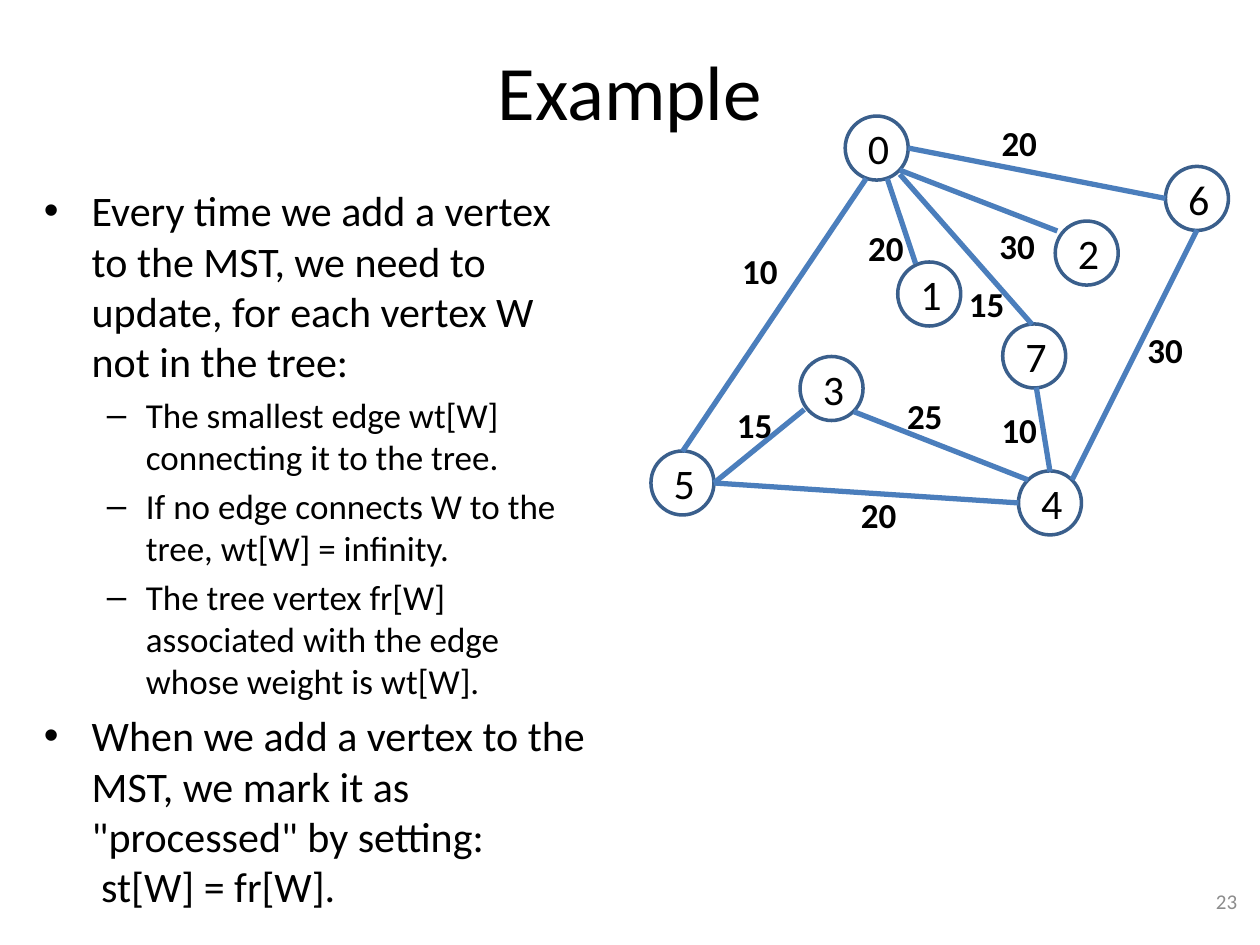
from dataclasses import dataclass

from lxml.etree import SubElement
from pptx import Presentation
from pptx.dml.color import RGBColor
from pptx.enum.shapes import MSO_CONNECTOR as Connector, MSO_SHAPE as Shape
from pptx.enum.text import MSO_ANCHOR as Anchor, PP_ALIGN as Align
from pptx.oxml.ns import qn
from pptx.util import Inches, Pt

COLUMNS, ROWS = 120, 90  # grid cells of 1/12 inch


@dataclass(frozen=True)
class Theme:
    font: str = "Calibri"
    ink: str = "000000"
    muted: str = "8C8C8C"
    outline: str = "3A5F8C"
    edge: str = "4B7EBC"
    title: int = 44
    body: int = 24
    detail: int = 20
    footer: int = 12
    outline_width: int = 2
    edge_width: int = 3


class GraphSlide:
    """Draws elements on one slide; all lengths are grid columns and rows."""

    def __init__(self, presentation, theme):
        self.theme = theme
        self.cell_width = presentation.slide_width / COLUMNS
        self.cell_height = presentation.slide_height / ROWS
        self.slide = presentation.slides.add_slide(presentation.slide_layouts[5])

    def place(self, column, row):
        return round(column * self.cell_width), round(row * self.cell_height)

    def box(self, column, row, width, height):
        return *self.place(column, row), *self.place(width, height)

    def fill_paragraph(self, paragraph, text, size, color=None, bold=False,
                       align=Align.LEFT):
        paragraph.text = text
        paragraph.alignment = align
        formats = {"name": self.theme.font, "size": Pt(size), "bold": bold}
        for run in paragraph.runs:
            for name, value in formats.items():
                setattr(run.font, name, value)
            run.font.color.rgb = RGBColor.from_string(color or self.theme.ink)

    def title(self, text, box):
        shape = self.slide.shapes.title
        for name, value in zip(("left", "top", "width", "height"), self.box(*box)):
            setattr(shape, name, value)
        shape.text_frame.vertical_anchor = Anchor.MIDDLE
        self.fill_paragraph(shape.text_frame.paragraphs[0], text,
                            self.theme.title, align=Align.CENTER)

    def text(self, text, box, size, wrap=True, anchor=Anchor.TOP, **style):
        frame = self.slide.shapes.add_textbox(*self.box(*box)).text_frame
        frame.word_wrap = wrap
        frame.vertical_anchor = anchor
        self.fill_paragraph(frame.paragraphs[0], text, size, **style)

    def bullets(self, items, box):
        levels = (
            (self.theme.body, "•", 0.38, 0.38),
            (self.theme.detail, "–", 0.81, 0.31),
        )
        frame = self.slide.shapes.add_textbox(*self.box(*box)).text_frame
        frame.word_wrap = True
        for index, (level, text) in enumerate(items):
            size, mark, margin, hanging = levels[level]
            paragraph = frame.add_paragraph() if index else frame.paragraphs[0]
            self.fill_paragraph(paragraph, text, size)
            paragraph.level = level
            paragraph.space_before = Pt(0.2 * size)
            properties = paragraph._p.get_or_add_pPr()
            properties.set("marL", str(Inches(margin)))
            properties.set("indent", str(-Inches(hanging)))
            SubElement(properties, qn("a:buFont")).set("typeface", "Arial")
            SubElement(properties, qn("a:buChar")).set("char", mark)

    def vertex(self, label, center):
        width, height = 6, 6.1
        column, row = center
        shape = self.slide.shapes.add_shape(
            Shape.OVAL,
            *self.box(column - width / 2, row - height / 2, width, height))
        shape.shadow.inherit = False
        shape.fill.background()
        shape.line.color.rgb = RGBColor.from_string(self.theme.outline)
        shape.line.width = Pt(self.theme.outline_width)
        frame = shape.text_frame
        for side in ("left", "right", "top", "bottom"):
            setattr(frame, f"margin_{side}", 0)
        frame.margin_left = Inches(0.03)
        frame.word_wrap = False
        frame.vertical_anchor = Anchor.MIDDLE
        self.fill_paragraph(frame.paragraphs[0], str(label), self.theme.body,
                            align=Align.CENTER)

    def edge(self, start, end):
        line = self.slide.shapes.add_connector(
            Connector.STRAIGHT, *self.place(*start), *self.place(*end))
        line.line.color.rgb = RGBColor.from_string(self.theme.edge)
        line.line.width = Pt(self.theme.edge_width)
        SubElement(line._element.spPr, qn("a:effectLst"))

    def weight(self, value, corner):
        self.text(str(value), (*corner, 5.9, 5.3), self.theme.detail,
                  wrap=False, bold=True)


BULLETS = (
    (0, "Every time we add a vertex to the MST, we need to update, "
        "for each vertex W not in the tree:"),
    (1, "The smallest edge wt[W] connecting it to the tree."),
    (1, "If no edge connects W to the tree, wt[W] = infinity."),
    (1, "The tree vertex fr[W] associated with the edge whose weight is wt[W]."),
    (0, "When we add a vertex to the MST, we mark it as "
        "\"processed\" by setting:\v st[W] = fr[W]."),
)

VERTEX_CENTERS = {
    0: (83.5, 14.1), 1: (88.5, 28), 2: (103.5, 24.1), 3: (79.2, 37),
    4: (100, 47.9), 5: (65, 46), 6: (114, 18.9), 7: (98.5, 33.9),
}

# from, to, offset from each centre, weight, corner of the weight's label
EDGES = (
    (0, 6, (3, 0), (-3, 0), 20, (94.2, 11)),
    (0, 2, (2.2, 2.1), (-2.8, -2.1), 30, (94, 20.8)),
    (0, 1, (1, 2.9), (-1.3, -2.9), 20, (81.5, 21)),
    (0, 5, (-1, 2.9), (0, -3), 10, (69.5, 23.2)),
    (0, 7, (2.2, 2.5), (-0.2, -3), 15, (91.1, 26.3)),
    (5, 3, (3, 0), (-2.6, 2), 15, (69, 37.8)),
    (5, 4, (3, 0), (-3, 0), 20, (80.8, 46.4)),
    (3, 4, (2.1, 2.2), (-2.1, -2.2), 25, (85.2, 37)),
    (7, 4, (0.2, 3), (0, -3), 10, (94.2, 38.3)),
    (6, 4, (0, 3), (2.1, -2.2), 30, (108.1, 30.7)),
)


def shifted(center, offset):
    return center[0] + offset[0], center[1] + offset[1]


def main():
    presentation = Presentation()
    presentation.slide_width, presentation.slide_height = Inches(10), Inches(7.5)
    theme = Theme()
    slide = GraphSlide(presentation, theme)
    slide.title("Example", (6, 1, 108, 15))
    slide.bullets(BULLETS, (3, 17, 54, 66))
    slide.text("23", (91, 83.4, 28, 4.8), theme.footer, anchor=Anchor.MIDDLE,
               color=theme.muted, align=Align.RIGHT)
    for label, center in VERTEX_CENTERS.items():
        slide.vertex(label, center)
    for start, end, start_offset, end_offset, weight, corner in EDGES:
        slide.edge(shifted(VERTEX_CENTERS[start], start_offset),
                   shifted(VERTEX_CENTERS[end], end_offset))
        slide.weight(weight, corner)
    presentation.save("out.pptx")


if __name__ == "__main__":
    main()
